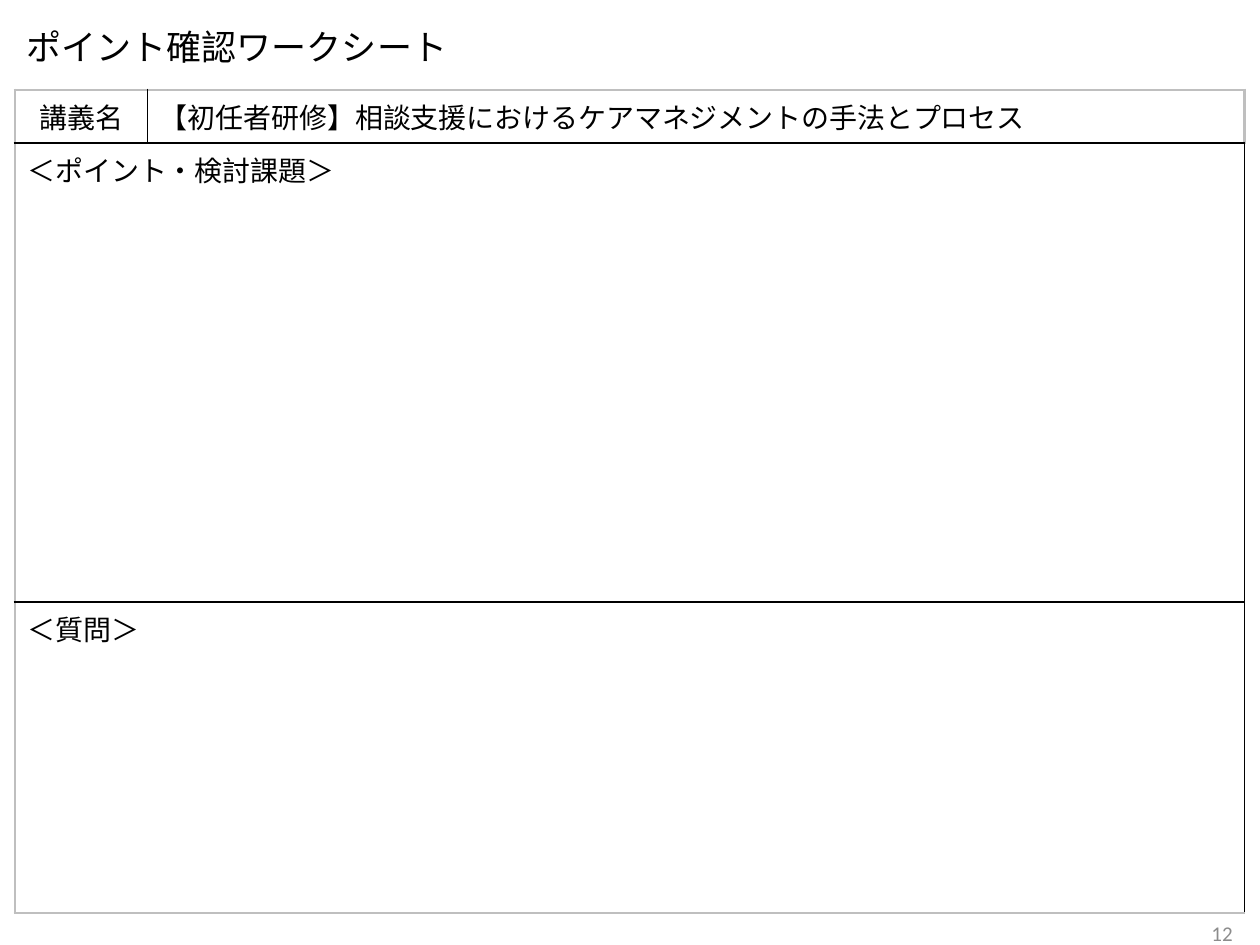
from lxml import etree
from pptx import Presentation
from pptx.dml.color import RGBColor
from pptx.enum.text import MSO_ANCHOR as Anchor, PP_ALIGN as Align
from pptx.oxml.ns import qn
from pptx.util import Cm, Pt

FONT = "Noto Sans CJK JP"
BLACK, GREY, WHITE = "000000", "BFBFBF", "FFFFFF"


def rgb(value):
    return RGBColor.from_string(value)


class Worksheet:
    def __init__(self, prs):
        self.s = prs.slides.add_slide(prs.slide_layouts[5])

    def set_text(self, tf, text, size, align=Align.LEFT, font=FONT, color=BLACK):
        tf.text = text
        p = tf.paragraphs[0]
        p.alignment = align
        r = p.runs[0]
        r.font.size = Pt(size)
        r.font.name = font
        r.font.color.rgb = rgb(color)
        ea = etree.SubElement(r.font._element, qn("a:ea"))
        ea.set("typeface", font)
        return p

    def title(self, text, left, top, width, height):
        sp = self.s.shapes.title
        sp.left, sp.top, sp.width, sp.height = Cm(left), Cm(top), Cm(width), Cm(height)
        sp.text_frame.vertical_anchor = Anchor.MIDDLE
        self.set_text(sp.text_frame, text, 20).line_spacing = 0.9

    def page_number(self, text, left, top, width, height):
        sp = self.s.shapes.add_textbox(Cm(left), Cm(top), Cm(width), Cm(height))
        tf = sp.text_frame
        tf.word_wrap = True
        tf.vertical_anchor = Anchor.MIDDLE
        self.set_text(tf, text, 12, Align.RIGHT, "Calibri", "8C8C8C")

    def table(self, left, top, cols, rows):
        frame = self.s.shapes.add_table(
            len(rows), len(cols), Cm(left), Cm(top), Cm(sum(cols)), Cm(sum(rows)))
        tbl = frame.table
        tbl.first_row = tbl.horz_banding = False
        for col, width in zip(tbl.columns, cols):
            col.width = Cm(width)
        for row, height in zip(tbl.rows, rows):
            row.height = Cm(height)
        return tbl

    def border(self, cell, side, color, width):
        tc_pr = cell._tc.get_or_add_tcPr()
        ln = etree.SubElement(tc_pr, qn(f"a:ln{side}"), w=str(Pt(width)))
        fill = etree.SubElement(ln, qn("a:solidFill"))
        etree.SubElement(fill, qn("a:srgbClr"), val=color)

    def style_cells(self, tbl):
        last_row, last_col = len(tbl.rows) - 1, len(tbl.columns) - 1
        for i, row in enumerate(tbl.rows):
            for j, cell in enumerate(row.cells):
                edges = {"L": j == 0, "R": j == last_col, "T": i == 0, "B": i == last_row}
                for side, outer in edges.items():
                    width = 1 if side in "LR" and not outer else 1.5
                    self.border(cell, side, GREY if outer else BLACK, width)
                cell.fill.solid()
                cell.fill.fore_color.rgb = rgb(WHITE)


def main():
    prs = Presentation()
    prs.slide_width, prs.slide_height = Cm(25.4), Cm(19.05)
    sheet = Worksheet(prs)
    sheet.title("ポイント確認ワークシート", 0.28, 0.5, 22.86, 0.97)
    sheet.page_number("12", 19.18, 18.31, 5.92, 1.02)

    tbl = sheet.table(0.3, 1.81, [2.67, 22.12], [1.07, 9.26, 6.27])
    sheet.style_cells(tbl)
    sheet.set_text(tbl.cell(0, 0).text_frame, "講義名", 16, Align.CENTER)
    sheet.set_text(tbl.cell(0, 1).text_frame,
                   "【初任者研修】相談支援におけるケアマネジメントの手法とプロセス", 16)
    for i, heading in enumerate(["＜ポイント・検討課題＞", "＜質問＞"], start=1):
        tbl.cell(i, 0).merge(tbl.cell(i, 1))
        sheet.set_text(tbl.cell(i, 0).text_frame, heading, 16)

    prs.save("out.pptx")


if __name__ == "__main__":
    main()
